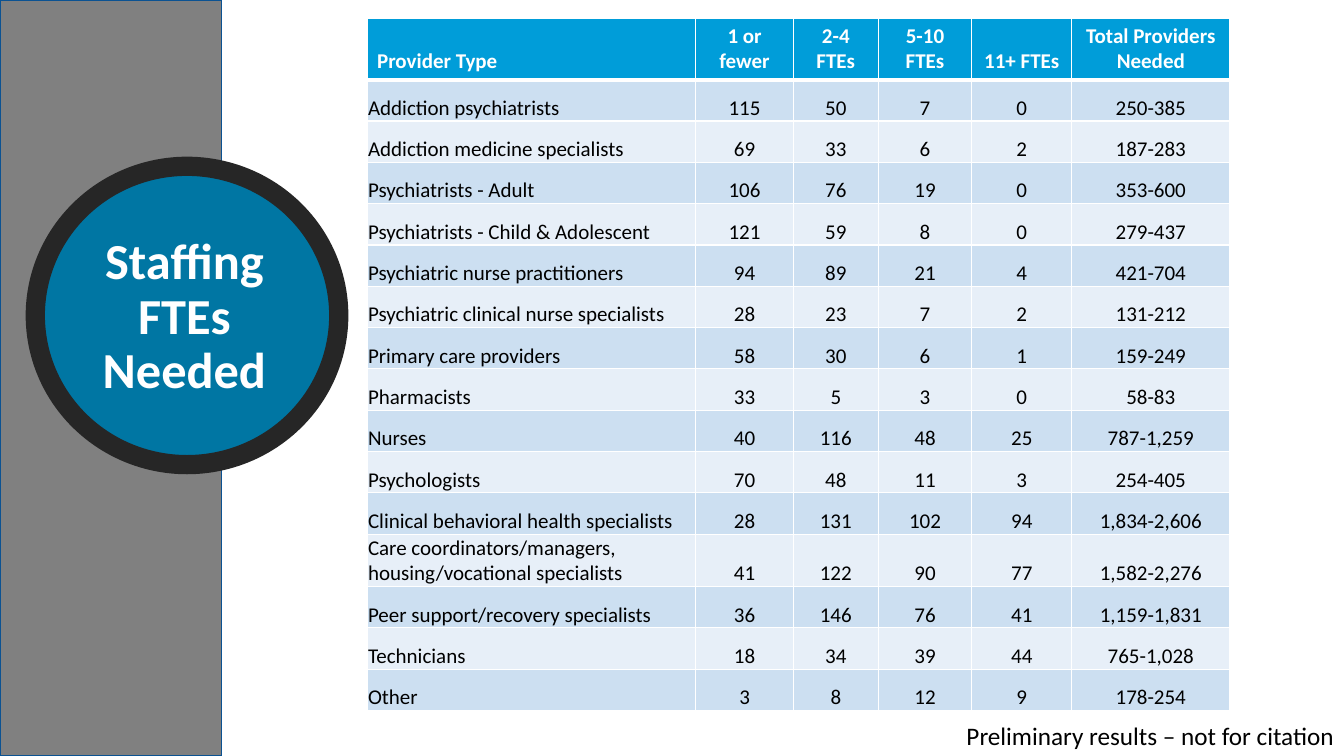
"""Build the Staffing FTEs Needed slide."""
from lxml.etree import SubElement
from pptx import Presentation
from pptx.dml.color import RGBColor
from pptx.enum.shapes import MSO_SHAPE
from pptx.enum.text import MSO_ANCHOR, PP_ALIGN
from pptx.oxml.ns import qn
from pptx.util import Inches, Pt

TITLE = "Staffing\nFTEs Needed"
FOOTNOTE = "Preliminary results – not for citation"
HEADER = ("Provider Type", "1 or fewer", "2-4 FTEs", "5-10 FTEs", "11+ FTEs", "Total Providers Needed")
PROVIDERS = [
    ("Addiction psychiatrists", "115", "50", "7", "0", "250-385"),
    ("Addiction medicine specialists", "69", "33", "6", "2", "187-283"),
    ("Psychiatrists - Adult", "106", "76", "19", "0", "353-600"),
    ("Psychiatrists - Child & Adolescent", "121", "59", "8", "0", "279-437"),
    ("Psychiatric nurse practitioners", "94", "89", "21", "4", "421-704"),
    ("Psychiatric clinical nurse specialists", "28", "23", "7", "2", "131-212"),
    ("Primary care providers", "58", "30", "6", "1", "159-249"),
    ("Pharmacists", "33", "5", "3", "0", "58-83"),
    ("Nurses", "40", "116", "48", "25", "787-1,259"),
    ("Psychologists", "70", "48", "11", "3", "254-405"),
    ("Clinical behavioral health specialists", "28", "131", "102", "94", "1,834-2,606"),
    ("Care coordinators/managers, housing/vocational specialists", "41", "122", "90", "77", "1,582-2,276"),
    ("Peer support/recovery specialists", "36", "146", "76", "41", "1,159-1,831"),
    ("Technicians", "18", "34", "39", "44", "765-1,028"),
    ("Other", "3", "8", "12", "9", "178-254"),
]
COLUMN_WIDTHS = (3.26, 0.97, 0.84, 0.93, 0.99, 1.57)
ROW_HEIGHT = 0.41
BAND_FILLS = ("CCDFF1", "E7EFF8")


def paint(fill, color):
    fill.solid()
    fill.fore_color.rgb = RGBColor.from_string(color)


def write(frame, text, size=15, color="000000", bold=False, align=PP_ALIGN.LEFT, spacing=None):
    para = frame.paragraphs[0]
    para.text = text
    para.alignment = align
    para.line_spacing = spacing
    for span in para.runs:
        span.font.name = "Calibri"
        span.font.size = Pt(size)
        span.font.bold = bold
        paint(span.font.fill, color)


def add_panel(page, kind, place, fill, line, width):
    panel = page.shapes.add_shape(kind, *map(Inches, place))
    panel.shadow.inherit = False
    paint(panel.fill, fill)
    paint(panel.line.fill, line)
    panel.line.width = Pt(width)


def add_text(page, place, text, anchor=MSO_ANCHOR.TOP, **style):
    box = page.shapes.add_textbox(*map(Inches, place))
    box.text_frame.word_wrap = True
    box.text_frame.vertical_anchor = anchor
    write(box.text_frame, text, **style)


def add_borders(cell, bottom):
    properties = cell._tc.get_or_add_tcPr()
    for side, width in (("L", 1), ("R", 1), ("T", 1), ("B", bottom)):
        line = SubElement(properties, qn(f"a:ln{side}"), w=str(Pt(width)))
        SubElement(SubElement(line, qn("a:solidFill")), qn("a:srgbClr"), val="FFFFFF")


def add_staffing_table(page):
    rows = [HEADER, *PROVIDERS]
    table = page.shapes.add_table(
        len(rows), len(HEADER), Inches(3.64), Inches(0.18),
        Inches(sum(COLUMN_WIDTHS)), Inches(ROW_HEIGHT * len(rows))).table
    for column, width in zip(table.columns, COLUMN_WIDTHS):
        column.width = Inches(width)
    for row_index, values in enumerate(rows):
        table.rows[row_index].height = Inches(ROW_HEIGHT)
        is_header = row_index == 0
        for column_index, value in enumerate(values):
            cell = table.cell(row_index, column_index)
            cell.vertical_anchor = MSO_ANCHOR.BOTTOM
            if not is_header:
                cell.margin_left = cell.margin_top = cell.margin_right = Inches(0.01)
                cell.margin_bottom = 0
            add_borders(cell, 3 if is_header else 1)
            paint(cell.fill, "009DD9" if is_header else BAND_FILLS[(row_index - 1) % 2])
            write(cell.text_frame, value, bold=is_header,
                  color="FFFFFF" if is_header else "000000",
                  align=PP_ALIGN.CENTER if column_index else PP_ALIGN.LEFT)


def main():
    deck = Presentation()
    deck.slide_width, deck.slide_height = Inches(13.33), Inches(7.5)
    page = deck.slides.add_slide(deck.slide_layouts[6])
    add_panel(page, MSO_SHAPE.RECTANGLE, (0, 0, 2.2, 7.5), "808080", "0B5292", 1)
    add_panel(page, MSO_SHAPE.OVAL, (0.35, 1.65, 3.01, 2.96), "0076A3", "262626", 13.75)
    add_staffing_table(page)
    add_text(page, (0.41, 2.34, 2.84, 1.63), TITLE, anchor=MSO_ANCHOR.MIDDLE, size=36,
             color="FFFFFF", bold=True, align=PP_ALIGN.CENTER, spacing=0.9)
    add_text(page, (4.21, 7.1, 9.12, 0.4), FOOTNOTE, size=18, align=PP_ALIGN.RIGHT)
    deck.save("out.pptx")


if __name__ == "__main__":
    main()
